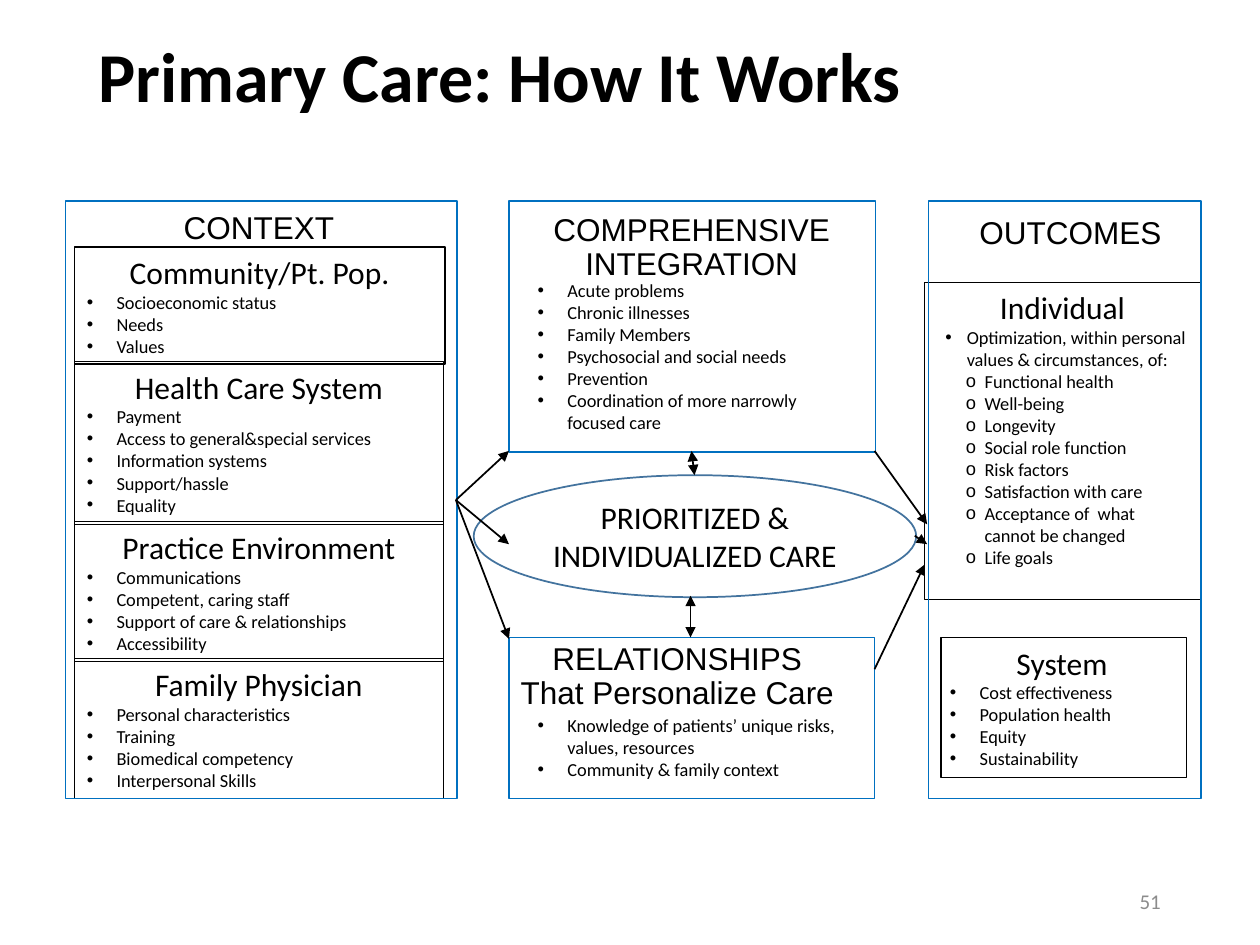
from dataclasses import dataclass
from typing import NamedTuple
from lxml.etree import SubElement
from pptx import Presentation
from pptx.dml.color import RGBColor
from pptx.enum.shapes import MSO_CONNECTOR, MSO_SHAPE
from pptx.enum.text import MSO_ANCHOR, PP_ALIGN
from pptx.oxml.ns import qn
from pptx.util import Cm, Pt


@dataclass(frozen=True)
class Theme:
    black: str = "000000"
    blue: str = "0070C0"
    steel: str = "43739E"
    white: str = "FFFFFF"
    gray: str = "8C8C8C"
    body: str = "Calibri"
    caps: str = "Arial"
    title: float = 40
    head: float = 18
    item: float = 10.5
    page: float = 12
    thin: float = 0.75
    thick: float = 1


class Box(NamedTuple):
    left: float
    top: float
    width: float
    height: float


class Bullet(NamedTuple):
    mark: str
    left: float
    hang: float


class Line(NamedTuple):
    text: str
    size: float
    font: str
    align: PP_ALIGN = PP_ALIGN.LEFT
    bullet: Bullet | None = None
    space: float | None = None
    bold: bool = False
    color: str = "000000"


class Card(NamedTuple):
    box: Box
    lines: list[Line]
    inset: float = 0.25


class Arrow(NamedTuple):
    start: tuple[float, float]
    end: tuple[float, float]
    double: bool = False


THEME = Theme()
DOT = Bullet("•", 0.6, 0.6)
CLOSE = Bullet("•", 0.6, 0.43)
RING = Bullet("o", 0.96, 0.38)


def head(text: str) -> Line:
    return Line(text, THEME.head, THEME.body, PP_ALIGN.CENTER)


def caps(text: str, space: float | None = None) -> Line:
    return Line(text, THEME.head, THEME.caps, PP_ALIGN.CENTER, space=space)


def items(*texts: str, bullet: Bullet = DOT) -> list[Line]:
    return [Line(text, THEME.item, THEME.body, bullet=bullet) for text in texts]


def write(frame, lines: list[Line], anchor=MSO_ANCHOR.TOP, inset: float = 0.25) -> None:
    frame.word_wrap = True
    frame.vertical_anchor = anchor
    frame.margin_left = Cm(inset)
    frame.text = "\n".join(line.text for line in lines)
    for para, line in zip(frame.paragraphs, lines):
        para.alignment = line.align
        if line.space:
            para.line_spacing = line.space
        if line.bullet:
            props = para._p.get_or_add_pPr()
            props.set("marL", str(Cm(line.bullet.left)))
            props.set("indent", str(-Cm(line.bullet.hang)))
            SubElement(props, qn("a:buFont")).set("typeface", THEME.caps)
            SubElement(props, qn("a:buChar")).set("char", line.bullet.mark)
        for run in para.runs:
            run.font.size = Pt(line.size)
            run.font.name = line.font
            run.font.bold = line.bold
            run.font.color.rgb = RGBColor.from_string(line.color)


def label(slide, box: Box, lines: list[Line], anchor=MSO_ANCHOR.TOP) -> None:
    write(slide.shapes.add_textbox(*map(Cm, box)).text_frame, lines, anchor)


def panel(slide, box: Box, color: str, width: float, kind=MSO_SHAPE.RECTANGLE):
    shape = slide.shapes.add_shape(kind, *map(Cm, box))
    shape.shadow.inherit = False
    shape.fill.background()
    shape.line.color.rgb = RGBColor.from_string(color)
    shape.line.width = Pt(width)
    return shape


def draw(slide, arrow: Arrow) -> None:
    link = slide.shapes.add_connector(
        MSO_CONNECTOR.STRAIGHT, *map(Cm, arrow.start + arrow.end))
    link.line.color.rgb = RGBColor.from_string(THEME.black)
    link.line.width = Pt(THEME.thick)
    edge = link.line._get_or_add_ln()
    for tag in ("a:headEnd", "a:tailEnd") if arrow.double else ("a:tailEnd",):
        SubElement(edge, qn(tag)).set("type", "triangle")
    SubElement(link._element.spPr, qn("a:effectLst"))


CARDS = [
    Card(Box(1.5, 4.98, 7.47, 2.36), [head("Community/Pt. Pop."), *items(
        "Socioeconomic status", "Needs", "Values")]),
    Card(Box(1.5, 7.29, 7.44, 3.28), [head("Health Care System"), *items(
        "Payment", "Access to general&special services",
        "Information systems", "Support/hassle", "Equality")]),
    Card(Box(1.5, 10.52, 7.44, 2.82), [head("Practice Environment"), *items(
        "Communications", "Competent, caring staff",
        "Support of care & relationships", "Accessibility")]),
    Card(Box(1.5, 13.28, 7.44, 2.82), [head("Family Physician"), *items(
        "Personal characteristics", "Training",
        "Biomedical competency", "Interpersonal Skills")]),
    Card(Box(18.64, 5.69, 5.56, 6.4), [
        head("Individual"),
        *items("Optimization, within personal values & circumstances, of:",
               bullet=CLOSE),
        *items("Functional health", "Well-being", "Longevity",
               "Social role function", "Risk factors", "Satisfaction with care",
               "Acceptance of  what cannot be changed", "Life goals",
               bullet=RING)]),
    Card(Box(18.97, 12.85, 4.95, 2.82), [head("System"), *items(
        "Cost effectiveness", "Population health", "Equity",
        "Sustainability")], 0.18),
]
LABELS = [
    Card(Box(1.5, 4.06, 7.44, 1.02), [caps("CONTEXT")]),
    Card(Box(19.28, 4.17, 4.6, 1.02), [caps("OUTCOMES")]),
    Card(Box(10.59, 4.19, 6.71, 1.65), [caps("COMPREHENSIVE INTEGRATION", 0.9)]),
    Card(Box(10.59, 5.51, 6.73, 3.4), items(
        "Acute problems", "Chronic illnesses", "Family Members",
        "Psychosocial and social needs", "Prevention",
        "Coordination of more narrowly focused care")),
    Card(Box(10.01, 12.85, 7.29, 1.65), [
        caps("RELATIONSHIPS", 0.9), caps("That Personalize Care", 0.9)]),
    Card(Box(10.59, 14.27, 6.73, 1.6), items(
        "Knowledge of patients’ unique risks, values, resources",
        "Community & family context")),
]
FRAMES = [
    Box(1.32, 4.06, 7.9, 12.04),
    Box(10.26, 4.06, 7.39, 5.05),
    Box(10.26, 12.85, 7.37, 3.25),
    Box(18.72, 4.06, 5.49, 12.04),
]
HUB = (9.19, 10.08)
ARROWS = [
    *(Arrow(HUB, (10.26, y)) for y in (9.09, 10.97, 12.88)),
    Arrow((14, 9.58), (13.94, 9.09), True),
    Arrow((13.92, 12.85), (13.92, 12.01), True),
    Arrow((17.63, 9.09), (18.69, 10.57)),
    Arrow((18.44, 10.8), (18.69, 10.97)),
    Arrow((17.63, 13.49), (18.64, 11.38)),
]


def main() -> None:
    deck = Presentation()
    deck.slide_width, deck.slide_height = Cm(25.4), Cm(19.05)
    slide = deck.slides.add_slide(deck.slide_layouts[6])
    label(slide, Box(1.73, 0.41, 21.89, 2.41), [
        Line("Primary Care: How It Works", THEME.title, THEME.body,
             space=0.9, bold=True)], MSO_ANCHOR.MIDDLE)
    for card in CARDS:
        shape = panel(slide, card.box, THEME.black, THEME.thin)
        write(shape.text_frame, card.lines, inset=card.inset)
    for card in LABELS:
        label(slide, card.box, card.lines)
    for box in FRAMES:
        panel(slide, box, THEME.blue, THEME.thick)
    core = panel(slide, Box(9.55, 9.58, 8.92, 2.46), THEME.steel,
                 THEME.thick, MSO_SHAPE.OVAL)
    core.fill.solid()
    core.fill.fore_color.rgb = RGBColor.from_string(THEME.white)
    write(core.text_frame, [head("PRIORITIZED & INDIVIDUALIZED CARE")],
          MSO_ANCHOR.MIDDLE)
    for arrow in ARROWS:
        draw(slide, arrow)
    label(slide, Box(17.93, 17.65, 5.72, 1.02), [
        Line("51", THEME.page, THEME.body, PP_ALIGN.RIGHT, color=THEME.gray)],
        MSO_ANCHOR.MIDDLE)
    deck.save("out.pptx")


if __name__ == "__main__":
    main()
